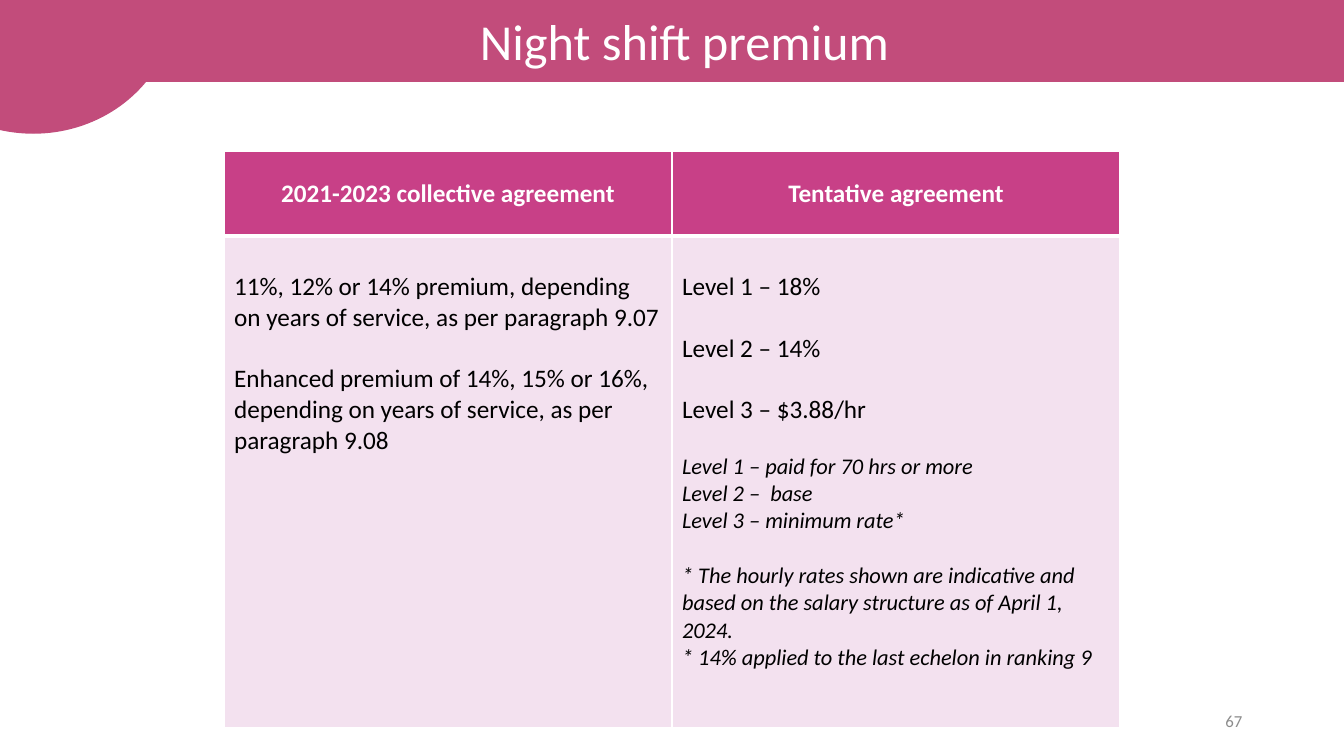
from dataclasses import dataclass

from lxml import etree
from pptx import Presentation
from pptx import util as u
from pptx.dml.color import RGBColor
from pptx.enum import shapes, text
from pptx.oxml.ns import qn

TITLE = "Night shift premium"
PAGE = "67"
HEADS = ["2021-2023 collective agreement", "Tentative agreement"]
# Each cell is a list of (style, gap above, text).
CELLS = [
    [
        ("body", True, "11%, 12% or 14% premium, depending on years of service, "
                       "as per paragraph 9.07"),
        ("body", True, "Enhanced premium of 14%, 15% or 16%, depending on years "
                       "of service, as per paragraph 9.08"),
    ],
    [
        ("body", True, "Level 1 – 18%"),
        ("body", True, "Level 2 – 14%"),
        ("body", True, "Level 3 – $3.88/hr"),
        ("note", True, "Level 1 – paid for 70 hrs or more"),
        ("note", False, "Level 2 –  base"),
        ("note", False, "Level 3 – minimum rate*"),
        ("note", True, "* The hourly rates shown are indicative and based on the "
                       "salary structure as of April 1, 2024."),
        ("note", False, "* 14% applied to the last echelon in ranking 9"),
    ],
]


@dataclass(frozen=True)
class Theme:
    font: str = "Calibri"
    band: str = "C24C7B"
    head: str = "C84087"
    cell: str = "F3E1EF"
    white: str = "FFFFFF"
    ink: str = "000000"
    grey: str = "8C8C8C"
    title: int = 36
    body: int = 18
    note: int = 16
    page: int = 12
    line: float = 1.22


T = Theme()
WIDE, HIGH = 13.33, 7.5
TABLE_W, TABLE_TOP = WIDE * 2 / 3, HIGH / 5
ROWS = [0.84, 4.88]
PAD = 0.05


def paint(fill, color):
    fill.solid()
    fill.fore_color.rgb = RGBColor.from_string(color)


def style(para, size, color, align, bold=False, italic=False):
    para.alignment = align
    for run in para.runs:
        font = run.font
        font.name, font.size = T.font, u.Pt(size)
        font.bold, font.italic = bold, italic
        font.color.rgb = RGBColor.from_string(color)


def place(shape, left, top, width, height):
    shape.left, shape.top = u.Inches(left), u.Inches(top)
    shape.width, shape.height = u.Inches(width), u.Inches(height)


def tint(shape):
    paint(shape.fill, T.band)
    shape.line.color.rgb = RGBColor.from_string(T.band)
    shape.line.width = u.Pt(1)


def border(cell, **widths):
    """Draw white cell borders; widths are points for L, R, T and B."""
    props = cell._tc.get_or_add_tcPr()
    for side, width in widths.items():
        line = etree.SubElement(props, qn(f"a:ln{side}"), w=str(u.Pt(width)))
        fill = etree.SubElement(line, qn("a:solidFill"))
        etree.SubElement(fill, qn("a:srgbClr"), val=T.white)


def add_title(slide):
    title = slide.shapes.title
    place(title, 0, 0, 13.58, 0.81)
    tint(title)
    frame = title.text_frame
    frame.text = TITLE
    frame.vertical_anchor = text.MSO_ANCHOR.MIDDLE
    style(frame.paragraphs[0], T.title, T.white, text.PP_ALIGN.CENTER)


def add_disc(slide):
    disc = slide.shapes.add_shape(
        shapes.MSO_SHAPE.OVAL, *map(u.Inches, (-1.08, -1.33, 2.82, 2.65)))
    disc.shadow.inherit = False
    tint(disc)


def add_page(slide):
    box = slide.shapes.add_textbox(*map(u.Inches, (9.42, 6.95, 3, 0.4)))
    frame = box.text_frame
    frame.word_wrap = True
    frame.vertical_anchor = text.MSO_ANCHOR.MIDDLE
    frame.text = PAGE
    style(frame.paragraphs[0], T.page, T.grey, text.PP_ALIGN.RIGHT)


def fill_head(cell, words):
    border(cell, L=1, R=1, T=1, B=3)
    paint(cell.fill, T.head)
    cell.text_frame.text = words
    cell.vertical_anchor = text.MSO_ANCHOR.MIDDLE
    style(cell.text_frame.paragraphs[0], T.body, T.white,
          text.PP_ALIGN.CENTER, bold=True)


def fill_body(cell, items):
    border(cell, L=1, R=1, T=3, B=1)
    paint(cell.fill, T.cell)
    cell.vertical_anchor = text.MSO_ANCHOR.TOP
    cell.margin_top = u.Inches(PAD + T.body * T.line / 72)
    frame = cell.text_frame
    frame.text = "\n".join(words for _, _, words in items)
    for i, (para, (kind, gap, _)) in enumerate(zip(frame.paragraphs, items)):
        size = getattr(T, kind)
        style(para, size, T.ink, text.PP_ALIGN.LEFT, italic=kind == "note")
        if gap and i:
            para.space_before = u.Pt(size * T.line)


def add_grid(slide):
    left = (WIDE - TABLE_W) / 2
    table = slide.shapes.add_table(
        len(ROWS), len(HEADS),
        *map(u.Inches, (left, TABLE_TOP, TABLE_W, sum(ROWS)))).table
    table.horz_banding = False
    for row, height in zip(table.rows, ROWS):
        row.height = u.Inches(height)
    for col, (head, items) in enumerate(zip(HEADS, CELLS)):
        fill_head(table.cell(0, col), head)
        fill_body(table.cell(1, col), items)


def main():
    deck = Presentation()
    deck.slide_width, deck.slide_height = u.Inches(WIDE), u.Inches(HIGH)
    slide = deck.slides.add_slide(deck.slide_layouts[5])
    add_title(slide)
    add_disc(slide)
    add_page(slide)
    add_grid(slide)
    deck.save("out.pptx")


if __name__ == "__main__":
    main()
